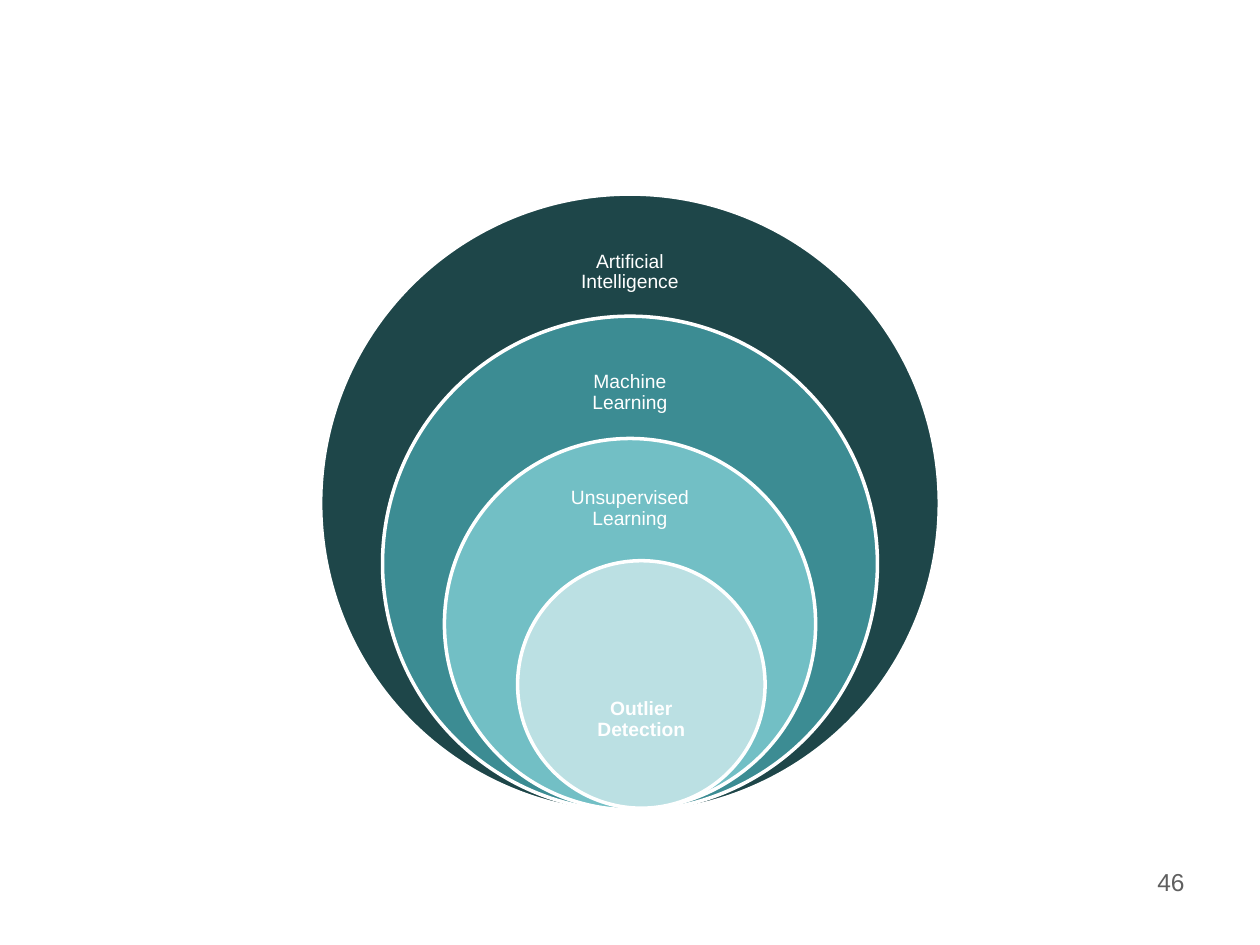
from pptx import Presentation
from pptx.dml.color import RGBColor
from pptx.enum.shapes import MSO_SHAPE as Shape
from pptx.enum.text import MSO_ANCHOR as Anchor, PP_ALIGN as Align
from pptx.util import Inches, Pt

WHITE = RGBColor(0xFF, 0xFF, 0xFF)
GRAY = RGBColor(0x5F, 0x5F, 0x5F)
DARK_TEAL = RGBColor(0x1E, 0x46, 0x49)
TEAL = RGBColor(0x3C, 0x8C, 0x93)
LIGHT_TEAL = RGBColor(0x72, 0xBF, 0xC5)
PALE_TEAL = RGBColor(0xBB, 0xE0, 0xE3)

deck = Presentation()
deck.slide_width, deck.slide_height = Inches(10), Inches(7.5)
page = deck.slides.add_slide(deck.slide_layouts[6])


def add_text(text, left, top, width, height, *, size=11, color=WHITE, bold=False,
             align=Align.CENTER, anchor=Anchor.MIDDLE, inset=0.09, spacing=0.9):
    box = page.shapes.add_textbox(Inches(left), Inches(top), Inches(width), Inches(height))
    frame = box.text_frame
    frame.word_wrap = True
    frame.vertical_anchor = anchor
    frame.margin_left = frame.margin_right = Inches(inset)
    frame.margin_top = frame.margin_bottom = Inches(inset)
    para = frame.paragraphs[0]
    para.alignment = align
    para.line_spacing = spacing
    span = para.add_run()
    span.text = text
    span.font.name = "Arial"
    span.font.size = Pt(size)
    span.font.bold = bold
    span.font.color.rgb = color


# Each circle is a fifth of the outer diameter smaller and one step lower.
OUTER, TOP, STEP = 4.91, 1.54, 0.97

# name, fill, circle centre, label: centre, top, width, height, bold
rings = [
    ("Artificial Intelligence", DARK_TEAL, 5, 5, 1.79, 1.37, 0.74, False),
    ("Machine Learning", TEAL, 5, 5, 2.76, 1.37, 0.71, False),
    ("Unsupervised Learning", LIGHT_TEAL, 5, 5, 3.71, 1.37, 0.66, False),
    ("Outlier Detection", PALE_TEAL, 5.09, 5.09, 5.22, 1.39, 0.98, True),
]

for level, (name, fill, center, label_center, label_top, width, height, bold) in enumerate(rings):
    diameter = OUTER * (5 - level) / 5
    circle = page.shapes.add_shape(
        Shape.OVAL, Inches(center - diameter / 2), Inches(TOP + level * STEP),
        Inches(diameter), Inches(diameter))
    circle.shadow.inherit = False
    circle.fill.solid()
    circle.fill.fore_color.rgb = fill
    circle.line.color.rgb = WHITE
    circle.line.width = Pt(2)
    add_text(name, label_center - width / 2, label_top, width, height, bold=bold)

add_text("46", 7.17, 6.83, 2.33, 0.52, size=14, color=GRAY, align=Align.RIGHT,
         anchor=Anchor.TOP, inset=0.1 / 2, spacing=1.0)
# The page number keeps the usual wider side margin.
page.shapes[-1].text_frame.margin_right = Inches(0.1)

deck.save("out.pptx")
